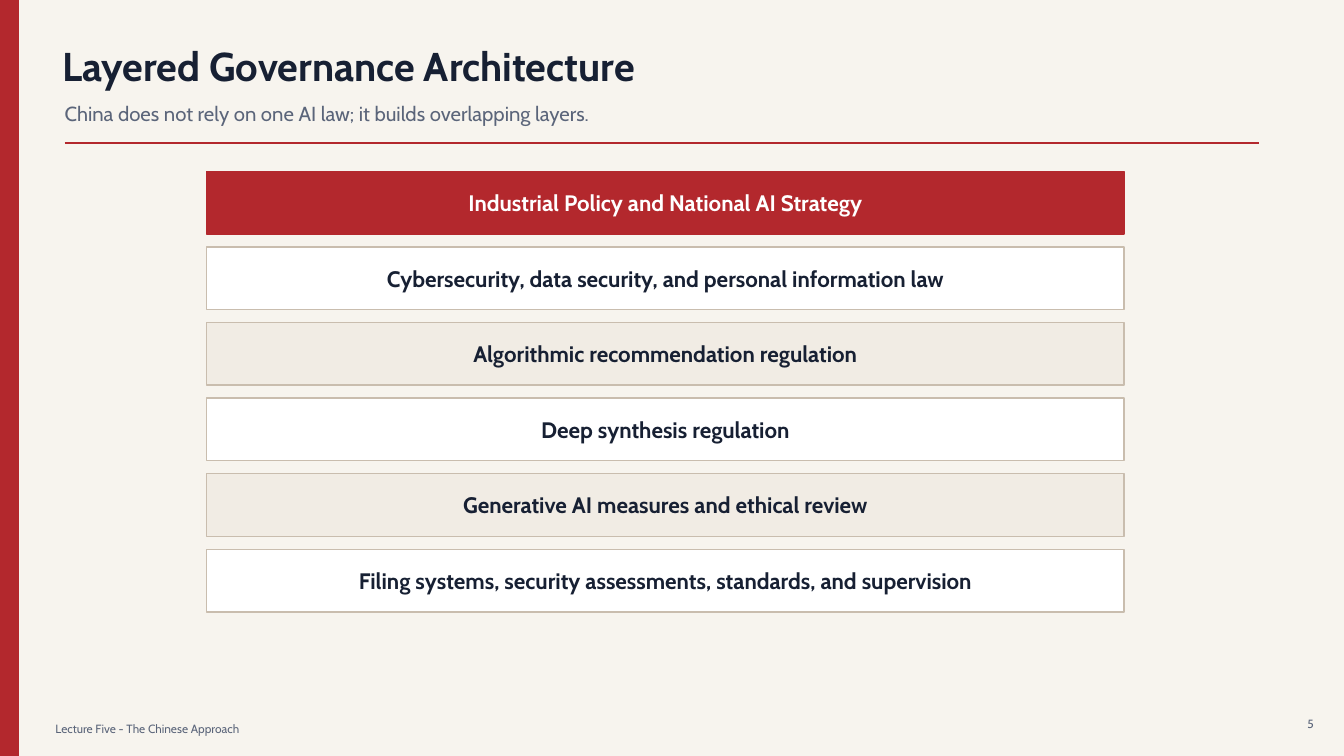
from dataclasses import dataclass

from lxml import etree
from pptx import Presentation
from pptx.dml.color import RGBColor
from pptx.enum.shapes import MSO_CONNECTOR as CONN, MSO_SHAPE as SHAPE
from pptx.enum.text import MSO_ANCHOR as ANCHOR, MSO_AUTO_SIZE as FIT, PP_ALIGN as ALIGN
from pptx.oxml.ns import qn
from pptx.util import Inches, Pt


@dataclass(frozen=True)
class Theme:
    font: str = "Cabin"
    paper: str = "F7F4EE"
    accent: str = "B3282D"
    ink: str = "172033"
    muted: str = "5B657A"
    white: str = "FFFFFF"
    sand: str = "F1ECE4"
    border: str = "C9BDAE"
    title: float = 28.7
    subtitle: float = 14.5
    layer: float = 16
    footer: float = 8.5


LAYERS = [
    "Industrial Policy and National AI Strategy",
    "Cybersecurity, data security, and personal information law",
    "Algorithmic recommendation regulation",
    "Deep synthesis regulation",
    "Generative AI measures and ethical review",
    "Filing systems, security assessments, standards, and supervision",
]


class Deck:
    """Draw themed elements on the current slide."""

    def __init__(self, theme):
        self.theme = theme
        self.prs = Presentation()
        self.prs.slide_width = Inches(13.33)
        self.prs.slide_height = Inches(7.5)

    def add_slide(self):
        self.s = self.prs.slides.add_slide(self.prs.slide_layouts[5])
        fill = self.s.background.fill
        fill.solid()
        fill.fore_color.rgb = RGBColor.from_string(self.theme.paper)

    def set_text(self, sp, text, size, color, bold=False, align=ALIGN.LEFT):
        tf = sp.text_frame
        frame = dict(word_wrap=True, auto_size=FIT.NONE, vertical_anchor=ANCHOR.MIDDLE,
                     margin_left=0, margin_right=0, margin_top=0, margin_bottom=0)
        for name, value in frame.items():
            setattr(tf, name, value)
        p = tf.paragraphs[0]
        p.alignment = align
        r = p.add_run()
        r.text = text
        for name, value in dict(name=self.theme.font, size=Pt(size), bold=bold).items():
            setattr(r.font, name, value)
        r.font.color.rgb = RGBColor.from_string(color)

    def title(self, box, text):
        sp = self.s.shapes.title
        for name, value in zip(("left", "top", "width", "height"), box):
            setattr(sp, name, Inches(value))
        self.set_text(sp, text, self.theme.title, self.theme.ink, bold=True)

    def text(self, box, text, size, align=ALIGN.LEFT):
        sp = self.s.shapes.add_textbox(*map(Inches, box))
        self.set_text(sp, text, size, self.theme.muted, align=align)

    def rect(self, box, fill, line):
        sp = self.s.shapes.add_shape(SHAPE.RECTANGLE, *map(Inches, box))
        sp.shadow.inherit = False
        sp.fill.solid()
        sp.fill.fore_color.rgb = RGBColor.from_string(fill)
        sp.line.color.rgb = RGBColor.from_string(line)
        sp.line.width = Pt(1)
        return sp

    def rule(self, x1, x2, y):
        sp = self.s.shapes.add_connector(CONN.STRAIGHT, *map(Inches, (x1, y, x2, y)))
        sp.line.color.rgb = RGBColor.from_string(self.theme.accent)
        sp.line.width = Pt(1.25)
        etree.SubElement(sp._element.spPr, qn("a:effectLst"))

    def layers(self, labels, left=2.05, top=1.7, width=9.1, height=0.62, pitch=0.75):
        t = self.theme
        for i, label in enumerate(labels):
            if i == 0:
                fill, line, color = t.accent, t.accent, t.white
            else:
                fill, line, color = (t.white if i % 2 else t.sand), t.border, t.ink
            sp = self.rect((left, top + i * pitch, width, height), fill, line)
            self.set_text(sp, label, t.layer, color, bold=True, align=ALIGN.CENTER)


def main():
    t = Theme()
    deck = Deck(t)
    deck.add_slide()
    deck.rect((0, 0, 0.18, 7.5), t.accent, t.accent)
    deck.text((0.55, 7.13, 9, 0.2), "Lecture Five - The Chinese Approach", t.footer)
    deck.text((12.75, 7.08, 0.28, 0.2), "5", t.footer, ALIGN.RIGHT)
    deck.title((0.62, 0.42, 9.8, 0.45), "Layered Governance Architecture")
    deck.text((0.64, 0.95, 10.9, 0.35),
              "China does not rely on one AI law; it builds overlapping layers.", t.subtitle)
    deck.rule(0.64, 12.49, 1.42)
    deck.layers(LAYERS)
    deck.prs.save("out.pptx")


if __name__ == "__main__":
    main()
